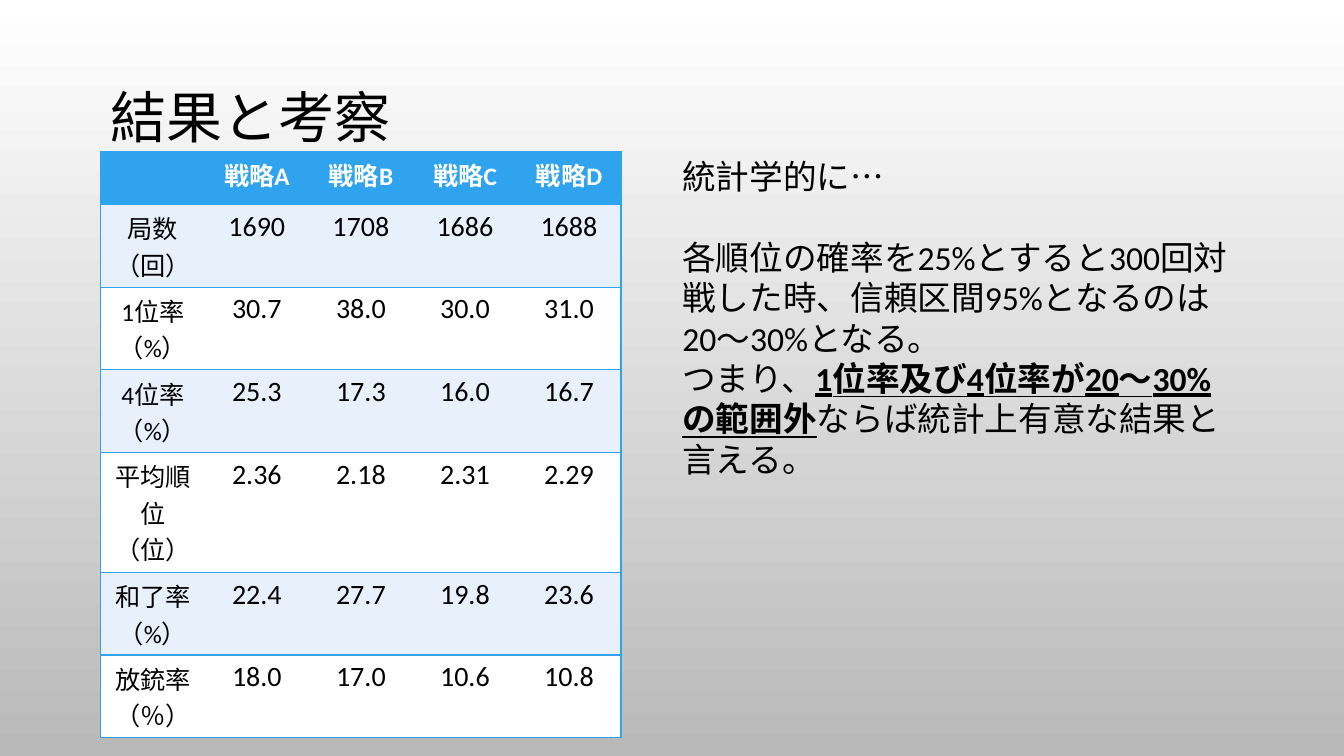
from lxml import etree
from pptx import Presentation
from pptx.dml.color import RGBColor
from pptx.enum.text import MSO_ANCHOR, PP_ALIGN
from pptx.oxml.ns import qn
from pptx.util import Inches, Pt

MIDDLE = MSO_ANCHOR.MIDDLE
CENTER = PP_ALIGN.CENTER

BLACK = RGBColor(0x00, 0x00, 0x00)
WHITE = RGBColor(0xFF, 0xFF, 0xFF)
GREY = RGBColor(0xB9, 0xB9, 0xB9)
BLUE = RGBColor(0x2F, 0xA3, 0xEE)
PALE_BLUE = RGBColor(0xE8, 0xF0, 0xFC)

FONT = "Calibri"
RESULTS = [
    ["", "戦略A", "戦略B", "戦略C", "戦略D"],
    ["局数（回）", "1690", "1708", "1686", "1688"],
    ["1位率（%）", "30.7", "38.0", "30.0", "31.0"],
    ["4位率（%）", "25.3", "17.3", "16.0", "16.7"],
    ["平均順位（位）", "2.36", "2.18", "2.31", "2.29"],
    ["和了率（%）", "22.4", "27.7", "19.8", "23.6"],
    ["放銃率（％）", "18.0", "17.0", "10.6", "10.8"],
]
# Room for one label line in the header, three in the average-rank row, else two
ROW_HEIGHTS = [0.53, 0.82, 0.82, 0.82, 1.19, 0.82, 0.82]

# Each paragraph: space before in points, then its (text, emphasised) spans
DISCUSSION = [
    (0, [("統計学的に…", False)]),
    (29, [("各順位の確率を25%とすると300回対戦した時、"
           "信頼区間95%となるのは20〜30%となる。", False)]),
    (0, [("つまり、", False),
         ("1位率及び4位率が20〜30%の範囲外", True),
         ("ならば統計上有意な結果と言える。", False)]),
]


def add_span(para, text, size, color=BLACK, **extra):
    span = para.add_run()
    span.text = text
    span.font.color.rgb = color
    for name, value in {"name": FONT, "size": Pt(size), **extra}.items():
        setattr(span.font, name, value)


def add_text_frame(page, left, top, width, height):
    box = page.shapes.add_textbox(Inches(left), Inches(top),
                                  Inches(width), Inches(height))
    box.text_frame.word_wrap = True
    return box.text_frame


def set_borders(cell, sides):
    """Draw a 1 pt blue line on the given sides and none on the others."""
    properties = cell._tc.get_or_add_tcPr()
    for side in "LRTB":
        line = etree.SubElement(properties, qn(f"a:ln{side}"), w=str(Pt(1)))
        if side in sides:
            fill = etree.SubElement(line, qn("a:solidFill"))
            etree.SubElement(fill, qn("a:srgbClr"), val=str(BLUE))
        else:
            etree.SubElement(line, qn("a:noFill"))


def paint_background(page):
    fill = page.background.fill
    fill.gradient()
    fill.gradient_angle = 270
    for stop, color, position in zip(fill.gradient_stops, (WHITE, GREY), (0, 1)):
        stop.color.rgb = color
        stop.position = position


def add_title(page, left, top, width, height):
    frame = add_text_frame(page, left, top, width, height)
    frame.vertical_anchor = MIDDLE
    para = frame.paragraphs[0]
    para.line_spacing = 0.9
    add_span(para, "結果と考察", 40)


def add_results_table(page, left, top, width):
    columns = len(RESULTS[0])
    table = page.shapes.add_table(
        len(RESULTS), columns, Inches(left), Inches(top),
        Inches(width), Inches(sum(ROW_HEIGHTS))).table
    for column in table.columns:
        column.width = Inches(width / columns)
    for r, (height, values) in enumerate(zip(ROW_HEIGHTS, RESULTS)):
        table.rows[r].height = Inches(height)
        header = r == 0
        for c, value in enumerate(values):
            cell = table.cell(r, c)
            sides = "TB" + "L" * (c == 0) + "R" * (c == columns - 1)
            set_borders(cell, sides)
            cell.fill.solid()
            cell.fill.fore_color.rgb = (
                BLUE if header else PALE_BLUE if r % 2 else WHITE)
            para = cell.text_frame.paragraphs[0]
            para.alignment = CENTER
            if value:
                add_span(para, value, 18 if header or c == 0 else 20,
                         WHITE if header else BLACK, bold=header)


def add_discussion(page, left, top, width, height):
    frame = add_text_frame(page, left, top, width, height)
    for i, (space, spans) in enumerate(DISCUSSION):
        para = frame.add_paragraph() if i else frame.paragraphs[0]
        if space:
            para.space_before = Pt(space)
        for text, strong in spans:
            add_span(para, text, 24, bold=strong, underline=strong)


def main():
    deck = Presentation()
    deck.slide_width, deck.slide_height = Inches(13.33), Inches(7.5)
    page = deck.slides.add_slide(deck.slide_layouts[6])
    paint_background(page)
    add_title(page, 1, 0.68, 11.33, 1.02)
    add_results_table(page, 1, 1.5, 5.16)
    add_discussion(page, 6.67, 1.5, 5.67, 3.33)
    deck.save("out.pptx")


if __name__ == "__main__":
    main()
